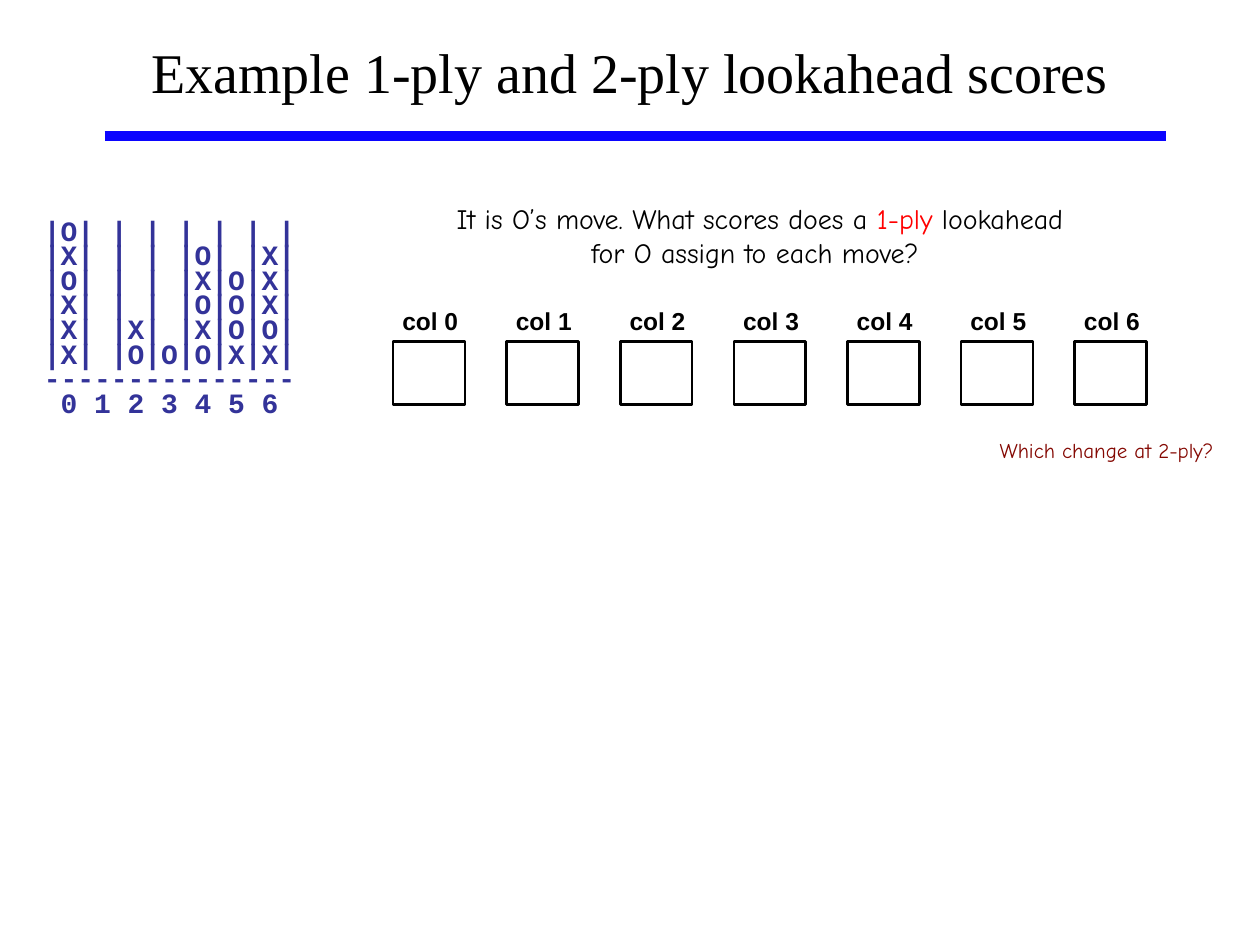
from dataclasses import dataclass

from pptx import Presentation
from pptx import util as u
from pptx.dml.color import RGBColor
from pptx.enum import shapes, text
from pptx.oxml import parse_xml
from pptx.slide import Slide

BLACK = "000000"
BOARD_ROWS = (
    "|O| | | | | | |",
    "|X| | | |O| |X|",
    "|O| | | |X|O|X|",
    "|X| | | |O|O|X|",
    "|X| |X| |X|O|O|",
    "|X| |O|O|O|X|X|",
    "---------------",
    " 0 1 2 3 4 5 6",
)
COLUMN_COUNT = 7
COLUMN_PITCH = 5.41 / (COLUMN_COUNT - 1)
EFFECT_LIST = '<a:effectLst xmlns:a="http://schemas.openxmlformats.org/drawingml/2006/main"/>'


@dataclass(frozen=True)
class Box:
    left: float
    top: float
    width: float
    height: float

    def lengths(self) -> list[u.Length]:
        return [u.Inches(side) for side in (self.left, self.top, self.width, self.height)]


@dataclass(frozen=True)
class Style:
    font: str
    size: float
    color: str = BLACK
    bold: bool = False
    align: text.PP_ALIGN = text.PP_ALIGN.CENTER


@dataclass(frozen=True)
class Run:
    words: str
    color: str = ""


TITLE = Style("Times New Roman", 32)
BOARD = Style("Courier New", 16, "333399", True, text.PP_ALIGN.LEFT)
QUESTION = Style("Comic Neue", 16)
LABEL = Style("Arial", 14, bold=True)
FOLLOW_UP = Style("Comic Neue", 12, "840802", align=text.PP_ALIGN.RIGHT)


def rgb(color: str) -> RGBColor:
    return RGBColor.from_string(color)


def add_text(slide: Slide, box: Box, style: Style, lines: list[list[Run]], **spacing) -> None:
    frame = slide.shapes.add_textbox(*box.lengths()).text_frame
    frame.word_wrap = True
    for index, runs in enumerate(lines):
        paragraph = frame.add_paragraph() if index else frame.paragraphs[0]
        for name, value in {"alignment": style.align, **spacing}.items():
            setattr(paragraph, name, value)
        for part in runs:
            run = paragraph.add_run()
            run.text = part.words
            values = {"name": style.font, "size": u.Pt(style.size), "bold": style.bold}
            for name, value in values.items():
                setattr(run.font, name, value)
            run.font.color.rgb = rgb(part.color or style.color)


def add_score_box(slide: Slide, box: Box) -> None:
    shape = slide.shapes.add_shape(shapes.MSO_SHAPE.RECTANGLE, *box.lengths())
    shape.shadow.inherit = False
    shape.fill.background()
    shape.line.color.rgb = rgb(BLACK)
    shape.line.width = u.Pt(1.5)


def add_rule(slide: Slide, left: float, right: float, top: float) -> None:
    ends = [u.Inches(value) for value in (left, top, right, top)]
    rule = slide.shapes.add_connector(shapes.MSO_CONNECTOR.STRAIGHT, *ends)
    rule.line.color.rgb = rgb("0B04FF")
    rule.line.width = u.Pt(6)
    rule._element.spPr.append(parse_xml(EFFECT_LIST))


def main() -> None:
    """Build the lookahead slide and save it."""
    presentation = Presentation()
    presentation.slide_width, presentation.slide_height = u.Inches(10), u.Inches(7.5)
    slide = presentation.slides.add_slide(presentation.slide_layouts[6])

    add_text(slide, Box(0.25, 1.8, 2.58, 1.68), BOARD, [[Run(row)] for row in BOARD_ROWS],
             line_spacing=0.3, space_before=u.Pt(8.3))
    question = [Run("It is O’s move. What scores does a "), Run("1-ply", "FF0000"),
                Run(" lookahead for O assign to each move? ")]
    add_text(slide, Box(3.49, 1.55, 5.08, 0.64), QUESTION, [question])
    for column in range(COLUMN_COUNT):
        offset = column * COLUMN_PITCH
        add_text(slide, Box(3.08 + offset, 2.38, 0.67, 0.33), LABEL, [[Run(f"col {column}")]])
        add_score_box(slide, Box(3.12 + offset, 2.71, 0.57, 0.5))
    add_text(slide, Box(6.89, 3.42, 2.84, 0.3), FOLLOW_UP, [[Run("Which change at 2-ply?")]])
    add_text(slide, Box(1, 0.25, 8, 0.63), TITLE, [[Run("Example 1-ply and 2-ply lookahead scores")]])
    add_rule(slide, 0.83, 9.25, 1.08)
    presentation.save("out.pptx")


if __name__ == "__main__":
    main()
